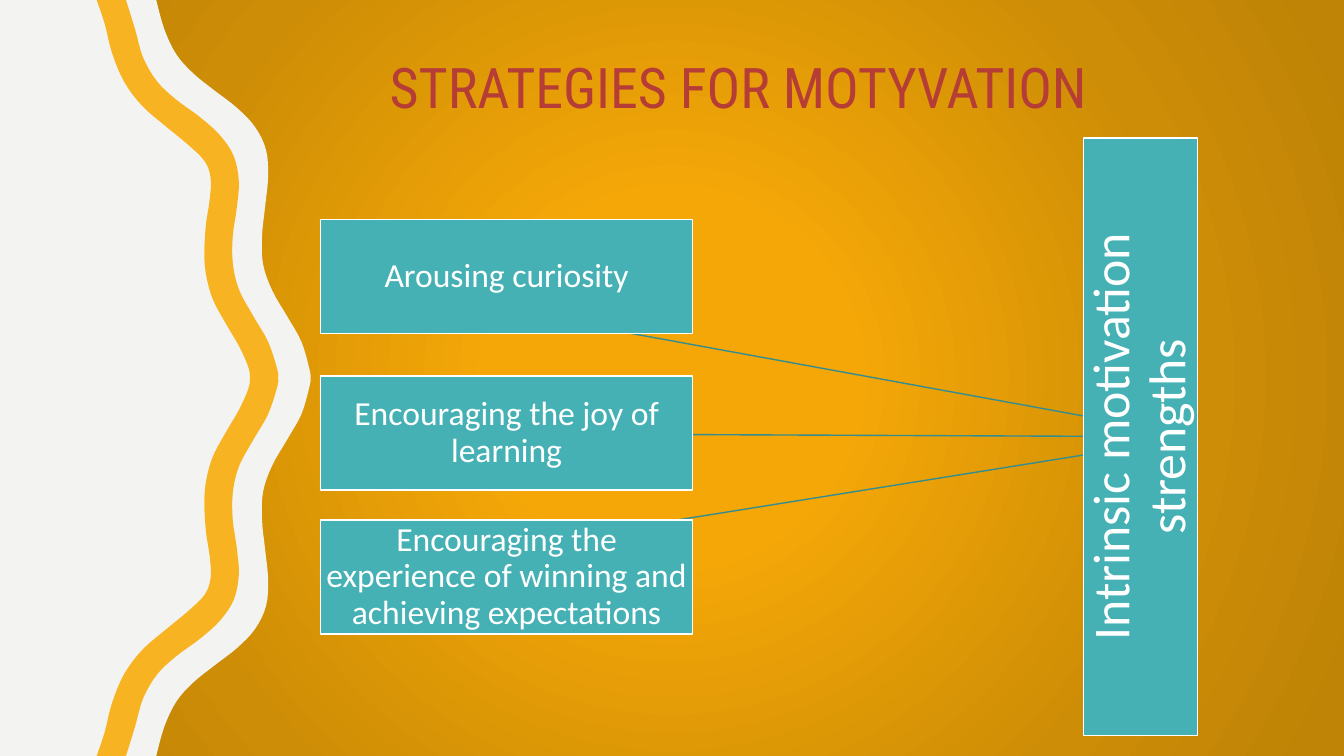
"""Build the slide on strategies for motivation."""
from lxml import etree
from pptx import Presentation
from pptx import util as u
from pptx.dml import color
from pptx.enum import shapes, text
from pptx.oxml import ns

WIDTH, HEIGHT = 960, 540
COLOURS = {
    "paper": "F3F3F2", "ribbon": "F8B323", "title": "B63D35", "box": "45B1B5",
    "white": "FFFFFF", "line": "348D8F",
    "glow": "F4A707", "amber": "CD8D06", "edge": "BF8306",
}
BACKGROUND_STOPS = [(0, "glow"), (23, "glow"), (69, "amber"), (97, "edge"), (100, "edge")]

PAPER_EDGE = [
    (111.6, 0), (117.4, 20.9), (126, 38.9), (138.2, 52.6), (153.4, 64.8), (169.2, 77),
    (182.2, 90.7), (190.1, 107.3), (191.5, 126.7), (189.4, 147.6), (187.2, 168.5),
    (187.9, 188.6), (194.4, 207.4), (205.2, 226.1), (215.3, 244.1), (221, 263.5), (221.8, 270),
]
RIBBON_RIGHT = [
    (90, 0), (96.5, 20.9), (102.2, 41), (112.3, 58.3), (126, 71.3), (142.6, 83.5),
    (157, 96.5), (167, 111.6), (170.6, 129.6), (169.2, 148.3), (166.3, 168.5),
    (166.3, 187.9), (170.6, 206.6), (180.7, 225.4), (191.5, 244.1), (198, 263.5), (198.7, 270),
]
RIBBON_LEFT = [
    (69.1, 0), (74.9, 17.3), (79.9, 37.4), (88.6, 58.3), (101.5, 75.6), (118.1, 90),
    (133.9, 103), (146.2, 115.2), (150.5, 127.4), (149.8, 142.6), (146.9, 162.7),
    (146.2, 188.6), (151.2, 211.7), (161.3, 231.1), (170.6, 247), (177.1, 261.4), (178.6, 270),
]

BOX_LEFT, BOX_WIDTH, BOX_HEIGHT = 229, 265.7, 81.4
STRATEGIES = [
    (157, "Arousing curiosity"),
    (268.6, "Encouraging the joy of learning"),
    (371.5, "Encouraging the experience of winning and achieving expectations"),
]
HUB_X, HUB_Y, HUB_LENGTH = 814.7, 312, 427


def rgb(name):
    """Return the named colour."""
    return color.RGBColor.from_string(COLOURS[name])


def paint_background(slide):
    """Fill the background with a radial gradient."""
    slide.background.fill.gradient()
    gradient = slide.element.find(".//" + ns.qn("a:gradFill"))
    for child in list(gradient):
        gradient.remove(child)
    stops = etree.SubElement(gradient, ns.qn("a:gsLst"))
    for position, name in BACKGROUND_STOPS:
        stop = etree.SubElement(stops, ns.qn("a:gs"), pos=str(position * 1000))
        etree.SubElement(stop, ns.qn("a:srgbClr"), val=COLOURS[name])
    circle = etree.SubElement(gradient, ns.qn("a:path"), {"path": "circle"})
    etree.SubElement(circle, ns.qn("a:fillToRect"), dict.fromkeys("ltrb", "50000"))


def wave(upper_half, steps=4):
    """Mirror the upper half downwards and smooth it as a Catmull-Rom curve."""
    knots = upper_half + [(x, HEIGHT - y) for x, y in upper_half[-2::-1]]
    padded = [knots[0], *knots, knots[-1]]
    points = []
    for a, b, c, d in zip(padded, padded[1:], padded[2:], padded[3:]):
        for step in range(steps):
            t = step / steps
            points.append(tuple(
                q + t * ((r - p) + t * ((2 * p - 5 * q + 4 * r - s)
                                        + t * (3 * q - p - 3 * r + s))) / 2
                for p, q, r, s in zip(a, b, c, d)))
    return points + [knots[-1]]


def add_outline(slide, points, fill):
    """Add a filled closed outline through the points."""
    (x, y), *others = points
    builder = slide.shapes.build_freeform(u.Pt(x), u.Pt(y))
    builder.add_line_segments([(u.Pt(x), u.Pt(y)) for x, y in others])
    shape = builder.convert_to_shape()
    shape.shadow.inherit = False
    shape.fill.solid()
    shape.fill.fore_color.rgb = rgb(fill)
    shape.line.fill.background()


def write(shape, content, size, font_name, colour, anchor, inset):
    """Write one centred paragraph into the shape."""
    frame = shape.text_frame
    frame.text = content
    frame.word_wrap = True
    frame.vertical_anchor = anchor
    frame.margin_left = frame.margin_right = u.Pt(inset[0])
    frame.margin_top = frame.margin_bottom = u.Pt(inset[1])
    paragraph = frame.paragraphs[0]
    paragraph.alignment = text.PP_ALIGN.CENTER
    paragraph.line_spacing = 0.9
    font = paragraph.runs[0].font
    font.size, font.name = u.Pt(size), font_name
    font.color.rgb = rgb(colour)


def add_title(slide, content):
    """Add the slide title."""
    box = slide.shapes.add_textbox(u.Pt(205.2), u.Pt(-28), u.Pt(644.4), u.Pt(118))
    write(box, content, 40, "Roboto Condensed", "title", text.MSO_ANCHOR.BOTTOM, (7.2, 3.6))


def add_box(slide, left, top, width, content, size, inset, rotation=0):
    """Add a teal box with white text."""
    shape = slide.shapes.add_shape(
        shapes.MSO_SHAPE.RECTANGLE, u.Pt(left), u.Pt(top), u.Pt(width), u.Pt(BOX_HEIGHT))
    shape.rotation = rotation
    shape.shadow.inherit = False
    shape.fill.solid()
    shape.fill.fore_color.rgb = rgb("box")
    shape.line.color.rgb = rgb("white")
    shape.line.width = u.Pt(1)
    write(shape, content, size, "Calibri", "white", text.MSO_ANCHOR.MIDDLE, (inset, inset))


def add_link(slide, start, end):
    """Add a thin straight line."""
    link = slide.shapes.add_connector(
        shapes.MSO_CONNECTOR.STRAIGHT, *(u.Pt(value) for value in (*start, *end)))
    link.line.color.rgb = rgb("line")
    link.line.width = u.Pt(1)
    etree.SubElement(link.element.spPr, ns.qn("a:effectLst"))


def main():
    """Build and save the slide."""
    presentation = Presentation()
    presentation.slide_width, presentation.slide_height = u.Pt(WIDTH), u.Pt(HEIGHT)
    slide = presentation.slides.add_slide(presentation.slide_layouts[6])
    paint_background(slide)
    add_outline(slide, [(0, 0), *wave(PAPER_EDGE), (0, HEIGHT)], "paper")
    add_outline(slide, wave(RIBBON_RIGHT) + wave(RIBBON_LEFT)[::-1], "ribbon")
    add_title(slide, "STRATEGIES FOR MOTYVATION")
    for top, _ in reversed(STRATEGIES):
        add_link(slide, (HUB_X + BOX_HEIGHT / 2, HUB_Y), (BOX_LEFT, top + BOX_HEIGHT / 2))
    add_box(slide, HUB_X - HUB_LENGTH / 2, HUB_Y - BOX_HEIGHT / 2, HUB_LENGTH,
            "Intrinsic motivation strengths", 37, 2, rotation=270)
    for top, content in STRATEGIES:
        add_box(slide, BOX_LEFT, top, BOX_WIDTH, content, 24, 1.5)
    presentation.save("out.pptx")


if __name__ == "__main__":
    main()
